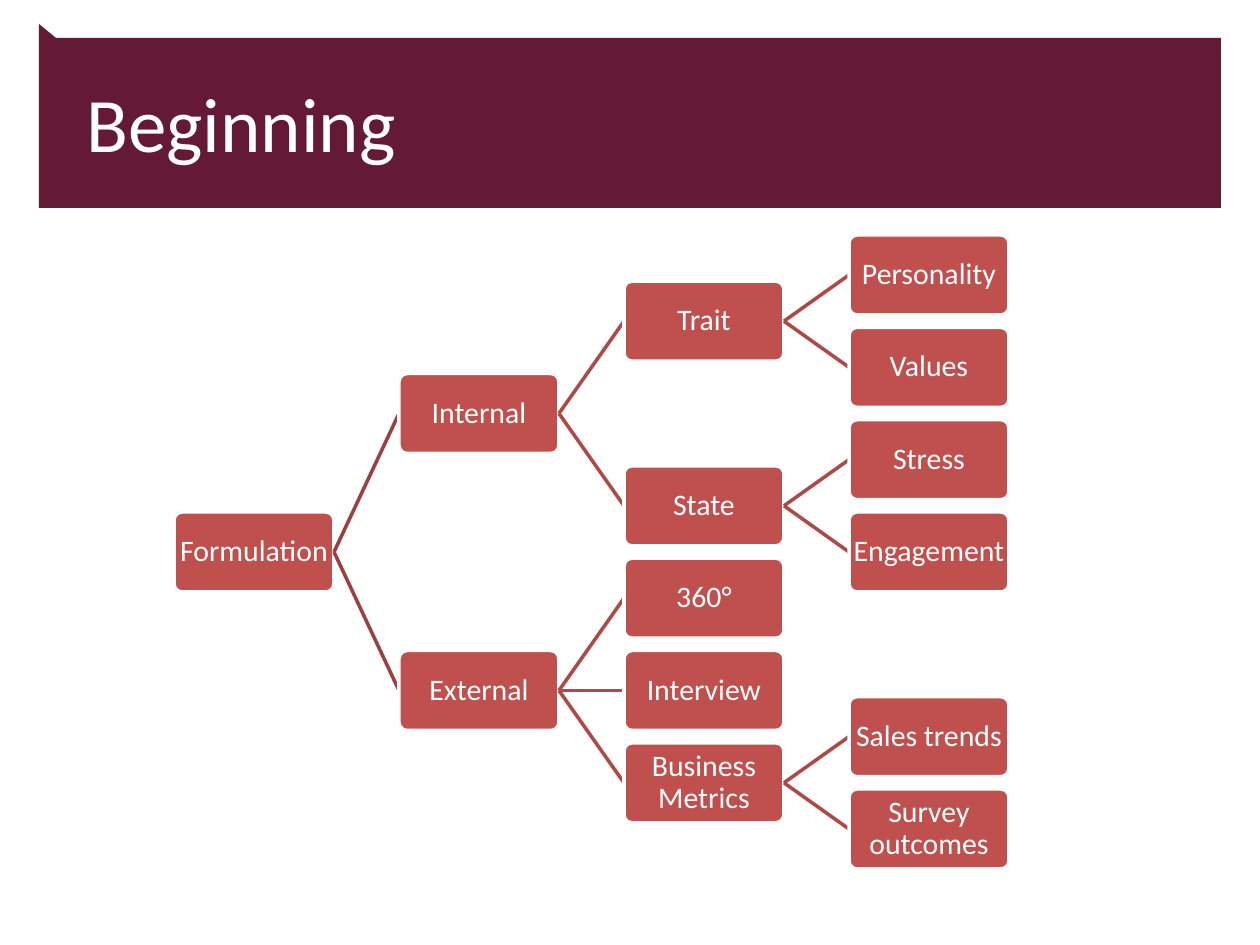
from pptx import Presentation
from pptx.dml.color import RGBColor
from pptx.enum.shapes import MSO_CONNECTOR, MSO_SHAPE
from pptx.enum.text import MSO_ANCHOR, MSO_AUTO_SIZE, PP_ALIGN
from pptx.oxml.ns import qn
from pptx.util import Emu, Pt
from lxml.etree import SubElement

PLUM, RED, WHITE = "641934", "C0504D", "FFFFFF"
rgb = RGBColor.from_string


def px(n):
    """Turn pixels (126 to the inch) into EMU."""
    return Emu(round(n * 914400 / 126))


def write(tf, text, size, align):
    tf.word_wrap = True
    tf.auto_size = MSO_AUTO_SIZE.NONE
    tf.vertical_anchor = MSO_ANCHOR.MIDDLE
    p = tf.paragraphs[0]
    p.alignment = align
    r = p.add_run()
    r.text = text
    r.font.name, r.font.size, r.font.color.rgb = "Calibri", Pt(size), rgb(WHITE)
    return p


prs = Presentation()
prs.slide_width, prs.slide_height = px(1260), px(945)
s = prs.slides.add_slide(prs.slide_layouts[5])

# Title band with its folded corner
for kind, box in [
    (MSO_SHAPE.RECTANGLE, (39, 38, 1182, 170)),
    (MSO_SHAPE.RIGHT_TRIANGLE, (39, 24, 17, 14)),
]:
    sp = s.shapes.add_shape(kind, *map(px, box))
    sp.shadow.inherit = False
    sp.fill.solid()
    sp.fill.fore_color.rgb = rgb(PLUM)
    sp.line.fill.background()

title = s.shapes.title
title.left, title.top, title.width, title.height = map(px, (74, 37, 1142, 169))
write(title.text_frame, "Beginning", 44, PP_ALIGN.LEFT)
s.shapes._spTree.append(title._element)  # in front of the band

# Tree: label, parent, column, row (in half steps between neighbouring leaves)
nodes = [
    ("Formulation", None, 0, 6),
    ("Internal", "Formulation", 1, 3),
    ("Trait", "Internal", 2, 1),
    ("Personality", "Trait", 3, 0),
    ("Values", "Trait", 3, 2),
    ("State", "Internal", 2, 5),
    ("Stress", "State", 3, 4),
    ("Engagement", "State", 3, 6),
    ("External", "Formulation", 1, 9),
    ("360°", "External", 2, 7),
    ("Interview", "External", 2, 9),
    ("Business Metrics", "External", 2, 11),
    ("Sales trends", "Business Metrics", 3, 10),
    ("Survey outcomes", "Business Metrics", 3, 12),
]
LEFT, FIRST_ROW, COL_STEP, ROW_STEP = 174, 275, 225, 554 / 12
BOX_W, BOX_H = 160, 80

centres = {}
for label, parent, col, row in nodes:
    x, y = LEFT + col * COL_STEP, FIRST_ROW + row * ROW_STEP
    centres[label] = (x, y)

    if parent:
        x0, y0 = centres[parent]
        line = s.shapes.add_connector(
            MSO_CONNECTOR.STRAIGHT, px(x0 + BOX_W), px(y0), px(x), px(y))
        line.line.width = Pt(2)
        line.line.color.rgb = rgb("9A403E" if col == 1 else "AE4946")
        SubElement(line._element.spPr, qn("a:effectLst"))

    sp = s.shapes.add_shape(
        MSO_SHAPE.ROUNDED_RECTANGLE, px(x), px(y - BOX_H / 2), px(BOX_W), px(BOX_H))
    sp.adjustments[0] = 0.1
    sp.shadow.inherit = False
    sp.fill.solid()
    sp.fill.fore_color.rgb = rgb(RED)
    sp.line.color.rgb = rgb(WHITE)
    sp.line.width = Pt(2)
    tf = sp.text_frame
    tf.margin_left = tf.margin_right = tf.margin_top = tf.margin_bottom = px(1)
    write(tf, label, 17, PP_ALIGN.CENTER).line_spacing = 0.9

prs.save("out.pptx")
